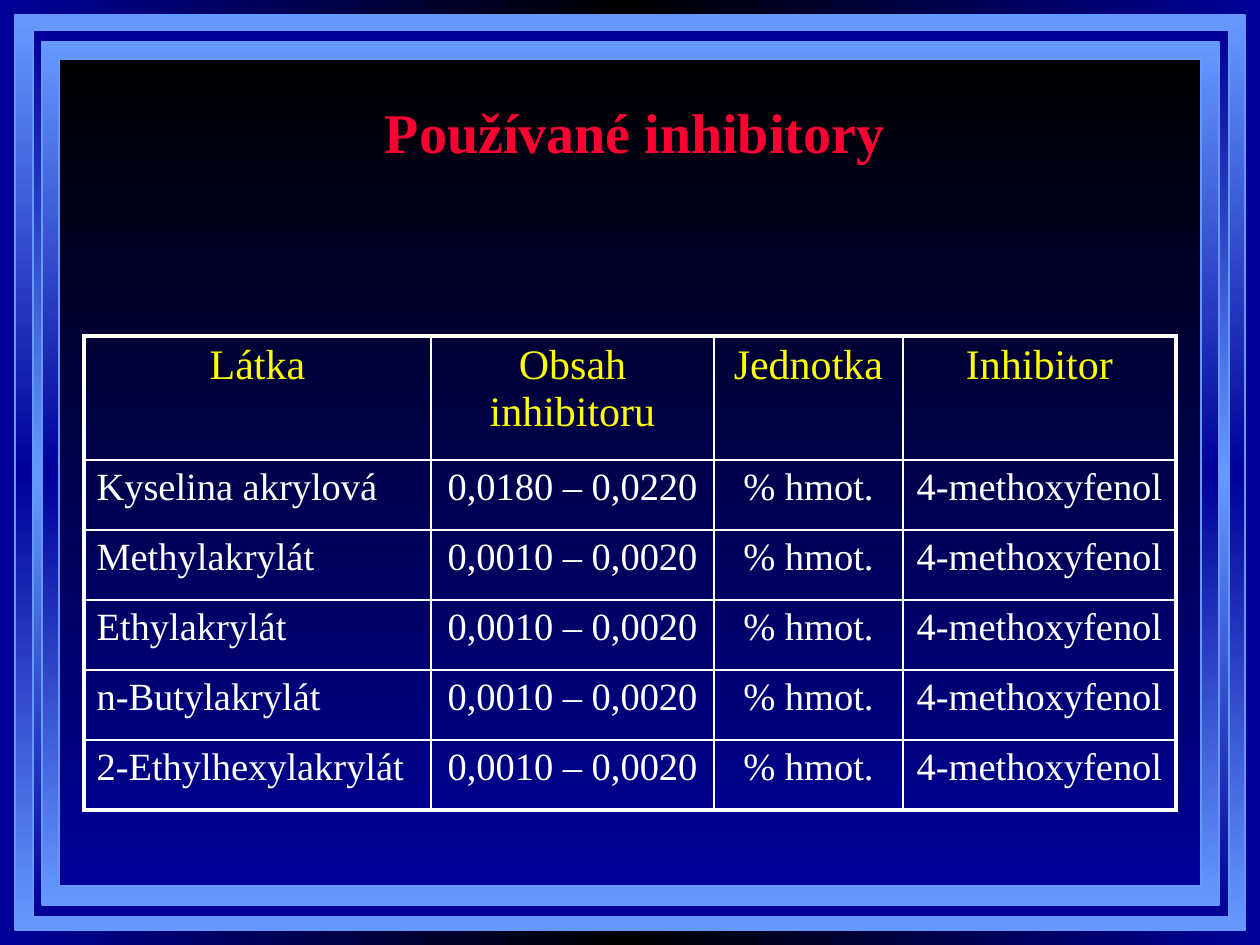
from lxml.etree import SubElement
from pptx import Presentation
from pptx.dml.color import RGBColor
from pptx.enum.shapes import MSO_SHAPE
from pptx.enum.text import MSO_ANCHOR, PP_ALIGN
from pptx.oxml.ns import qn
from pptx.util import Pt

# Content
TITLE = "Používané inhibitory"
HEAD = ["Látka", "Obsah inhibitoru", "Jednotka", "Inhibitor"]
LOW = "0,0010 – 0,0020"
ITEMS = [
    ("Kyselina akrylová", "0,0180 – 0,0220"),
    ("Methylakrylát", LOW),
    ("Ethylakrylát", LOW),
    ("n-Butylakrylát", LOW),
    ("2-Ethylhexylakrylát", LOW),
]
ROWS = [HEAD] + [[name, dose, "% hmot.", "4-methoxyfenol"] for name, dose in ITEMS]

# Look
FONT = "Times New Roman"
COLOR = {"black": "000000", "navy": "000099", "sky": "6699FF",
         "red": "FF0033", "yellow": "FFFF00", "white": "FFFFFF"}
OUT = ["sky", "navy", "sky"]
FRAMES = [  # left, top, width, height, gradient
    (15, 15, 1230, 915, OUT),
    (33, 30, 1196, 887, ["navy", "sky", "navy"]),
    (42, 42, 1177, 863, OUT),
    (59, 59, 1142, 827, ["black", "navy"]),
]
WIDTHS = [347, 283, 189, 273]
HEIGHTS = [124] + [70] * len(ITEMS)
THIN, THICK = 1, 2.25


def px(n):
    return round(n * 914400 / 126)


def rgb(name):
    return RGBColor.from_string(COLOR[name])


def shade(fill, root, names, angle):
    """Spread the named colours evenly along a linear gradient."""
    fill.gradient()
    grad = next(root.iter(qn("a:gradFill")))
    stops = grad.find(qn("a:gsLst"))
    for old in list(stops):
        stops.remove(old)
    for i, name in enumerate(names):
        pos = 100000 * i // (len(names) - 1)
        stop = SubElement(stops, qn("a:gs"), pos=str(pos))
        SubElement(stop, qn("a:srgbClr"), val=COLOR[name])
    grad.find(qn("a:lin")).set("ang", str(angle * 60000))


def style(par, size, color, align=PP_ALIGN.CENTER, bold=False):
    par.alignment = align
    font = par.font
    font.name, font.size, font.bold = FONT, Pt(size), bold
    font.color.rgb = rgb(color)


def border(cell, side, width):
    line = SubElement(cell._tc.get_or_add_tcPr(), qn("a:ln" + side), w=str(Pt(width)))
    fill = SubElement(line, qn("a:solidFill"))
    SubElement(fill, qn("a:srgbClr"), val=COLOR["white"])


deck = Presentation()
deck.slide_width, deck.slide_height = px(1260), px(945)
slide = deck.slides.add_slide(deck.slide_layouts[5])

# Background and nested frames
shade(slide.background.fill, slide.element, ["navy", "black", "navy"], 0)
group = slide.shapes.add_group_shape()
for *box, names in FRAMES:
    frame = group.shapes.add_shape(MSO_SHAPE.RECTANGLE, *map(px, box))
    frame.shadow.inherit = False
    shade(frame.fill, frame.element, names, 90)
    frame.line.color.rgb = rgb("sky")
    frame.line.width = Pt(1)

# Title, raised above the frames
title = slide.shapes.title
title.element.getparent().append(title.element)
title.left, title.top, title.width, title.height = map(px, (73, 73, 1124, 116))
title.text_frame.text = TITLE
title.text_frame.vertical_anchor = MSO_ANCHOR.MIDDLE
style(title.text_frame.paragraphs[0], 32, "red", bold=True)

# Table
table = slide.shapes.add_table(
    len(ROWS), len(HEAD), px(84), px(336), px(sum(WIDTHS)), px(sum(HEIGHTS))).table
table.first_row = table.horz_banding = False
for col, width in zip(table.columns, WIDTHS):
    col.width = px(width)
for row, height in zip(table.rows, HEIGHTS):
    row.height = px(height)
for r, texts in enumerate(ROWS):
    for c, text in enumerate(texts):
        cell = table.cell(r, c)
        cell.text = text
        if r == 0:
            style(cell.text_frame.paragraphs[0], 24, "yellow")
        else:
            align = PP_ALIGN.CENTER if c else PP_ALIGN.LEFT
            style(cell.text_frame.paragraphs[0], 22, "white", align)
        edges = {"L": c == 0, "R": c == len(HEAD) - 1,
                 "T": r == 0, "B": r == len(ROWS) - 1}
        for side, outer in edges.items():
            border(cell, side, THICK if outer else THIN)
        cell.fill.background()

deck.save("out.pptx")
